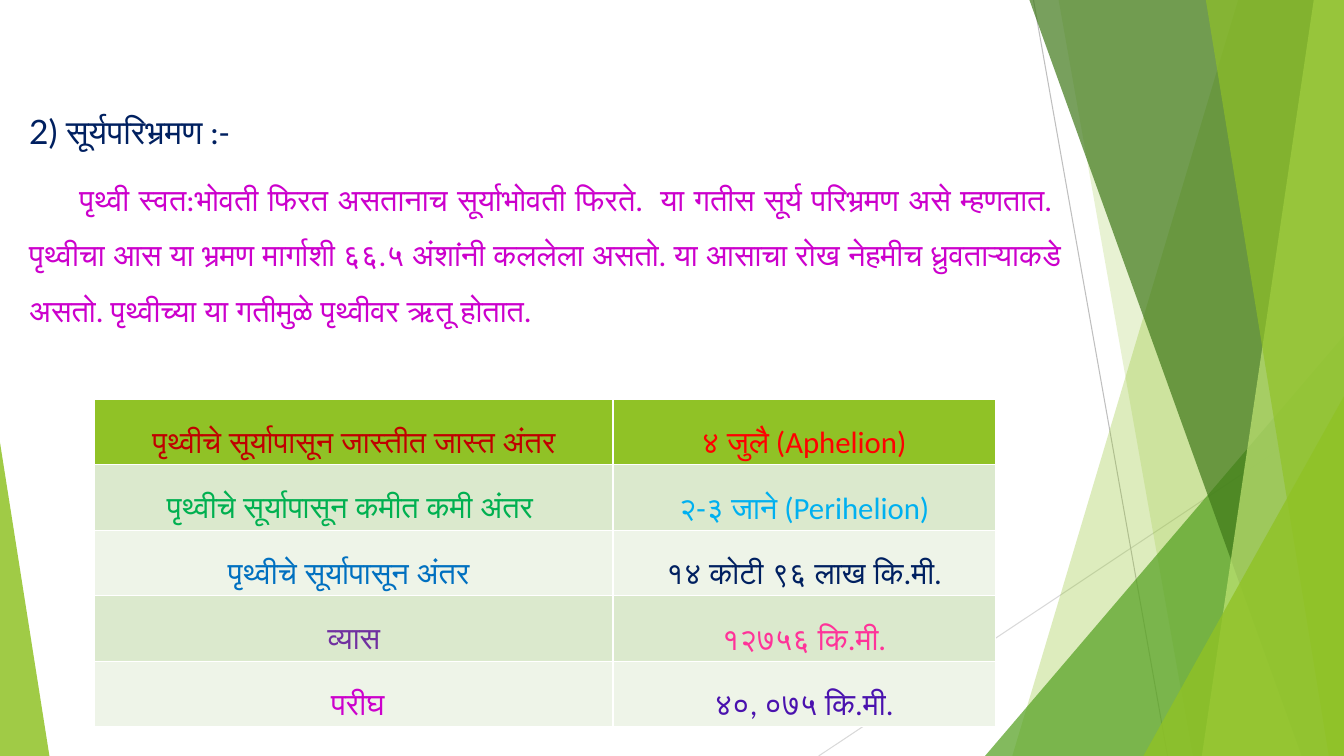
from dataclasses import dataclass
from lxml.etree import SubElement
from pptx import Presentation
from pptx.dml.color import RGBColor
from pptx.enum.shapes import MSO_CONNECTOR, MSO_SHAPE
from pptx.enum.text import PP_ALIGN
from pptx.oxml.ns import qn
from pptx.util import Inches, Pt

W, H = 13.33, 7.5


@dataclass(frozen=True)
class Theme:
    script: str = "Lato"
    latin: str = "Calibri"
    heading: int = 24
    body: int = 22
    spacing: float = 1.5
    navy: str = "002060"
    magenta: str = "CC00CC"
    green: str = "90C226"
    leaf: str = "54A021"
    forest: str = "3F7819"
    lime: str = "C0E474"
    bands: tuple = ("DBE9CD", "EEF4E8")
    lines: tuple = ("BFBFBF", "D9D9D9")


T = Theme()

# Runs alternate between the script font and the Latin font at each bar.
HEADING = "2) सूर्यपरिभ्रमण| :-"
BODY = ("\tपृथ्वी स्वत|:|भोवती फिरत असतानाच सूर्याभोवती फिरते|.  |"
        "या गतीस सूर्य परिभ्रमण असे म्हणतात|.  |"
        "पृथ्वीचा आस या भ्रमण मार्गाशी ६६|.|५ अंशांनी कललेला असतो|. |"
        "या आसाचा रोख नेहमीच ध्रुवताऱ्याकडे असतो|. |"
        "पृथ्वीच्या या गतीमुळे पृथ्वीवर ऋतू होतात|.")
FACTS = [
    (("पृथ्वीचे सूर्यापासून जास्तीत जास्त अंतर", "C00000"),
     ("४ जुलै| (Aphelion)", "FF0000")),
    (("पृथ्वीचे सूर्यापासून कमीत कमी अंतर ", "00B050"),
     ("२|-|३ जाने| (Perihelion)", "00B0F0")),
    (("पृथ्वीचे सूर्यापासून अंतर \t", "0070C0"),
     ("१४ कोटी ९६ लाख कि|.|मी|.", T.navy)),
    (("व्यास", "7030A0"), ("१२७५६ कि|.|मी|.", "FF3399")),
    ((" परीघ", T.magenta), ("४०|, |०७५ कि|.|मी|.", "4A12AE")),
]
COLUMNS = (5.14, 3.79)
ROW = 0.65

RAYS = [
    (((W, 4.03), (8.12, H)), T.lines[1]),
    (((10.25, 0), (11.58, H)), T.lines[0]),
]
FACETS = [
    ("band", 12.28, 10.04, T.green, 30),
    ("band", 10.5, 11.83, T.green, 20),
    ("peak", 9.77, 3.33, T.leaf, 72),
    ("band", 10.21, 12.91, T.forest, 70),
    ("band", 13.03, 11.92, T.lime, 70),
    ("band", 11.96, 13.18, T.green, 65),
    ("peak", 11.34, 3.93, T.green, 80),
    ("corner", 0.49, 4.39, T.green, 85),
]


def write(p, text, size=T.body, color=T.navy, align=PP_ALIGN.CENTER, after=0):
    p.alignment, p.line_spacing, p.space_after = align, T.spacing, Pt(after)
    pPr = p._p.get_or_add_pPr()
    for key, value in (("marL", 0), ("indent", 0), ("defTabSz", Inches(0.5))):
        pPr.set(key, str(int(value)))
    for i, part in enumerate(text.split("|")):
        r = p.add_run()
        r.text = part
        r.font.size, r.font.bold = Pt(size), False
        r.font.name = T.latin if i % 2 else T.script
        r.font.color.rgb = RGBColor.from_string(color)
        SubElement(r._r.get_or_add_rPr(), qn("a:cs"), typeface=r.font.name)


def facet(s, kind, x, y, color, alpha):
    if kind == "band":
        fb = s.shapes.build_freeform(Inches(x), 0)
        fb.add_line_segments([(Inches(a), Inches(b)) for a, b in
                              ((W, 0), (W, H), (y, H))], close=True)
        sp = fb.convert_to_shape()
    else:
        left, width = (0, x) if kind == "corner" else (x, W - x)
        sp = s.shapes.add_shape(MSO_SHAPE.ISOSCELES_TRIANGLE, Inches(left),
                                Inches(y), Inches(width), Inches(H - y))
        sp.adjustments[0] = 0 if kind == "corner" else 1
    sp.shadow.inherit = False
    sp.line.fill.background()
    sp.fill.solid()
    sp.fill.fore_color.rgb = RGBColor.from_string(color)
    clr = sp.fill._xPr.find(qn("a:solidFill"))[0]
    SubElement(clr, qn("a:alpha"), val=str(alpha * 1000))


def ray(s, ends, color):
    c = s.shapes.add_connector(MSO_CONNECTOR.STRAIGHT,
                               *(Inches(v) for end in ends for v in end))
    c.line.color.rgb = RGBColor.from_string(color)
    c.line.width = Pt(0.75)
    SubElement(c._element.spPr, qn("a:effectLst"))


def facts_table(s):
    tbl = s.shapes.add_table(len(FACTS), len(COLUMNS), Inches(0.94), Inches(3.96),
                             Inches(sum(COLUMNS)), Inches(ROW * len(FACTS))).table
    for col, width in zip(tbl.columns, COLUMNS):
        col.width = Inches(width)
    for i, row in enumerate(FACTS):
        fill = T.bands[(i - 1) % 2] if i else T.green
        for j, (text, color) in enumerate(row):
            cell = tbl.cell(i, j)
            cell.fill.solid()
            cell.fill.fore_color.rgb = RGBColor.from_string(fill)
            write(cell.text_frame.paragraphs[0], text, color=color)


def main():
    prs = Presentation()
    prs.slide_width, prs.slide_height = Inches(W), Inches(H)
    s = prs.slides.add_slide(prs.slide_layouts[6])
    for ends, color in RAYS:
        ray(s, ends, color)
    for item in FACETS:
        facet(s, *item)
    tf = s.shapes.add_textbox(Inches(0.19), Inches(0.85),
                              Inches(10.43), Inches(3.03)).text_frame
    tf.word_wrap = True
    write(tf.paragraphs[0], HEADING, size=T.heading,
          align=PP_ALIGN.JUSTIFY, after=8)
    write(tf.add_paragraph(), BODY, color=T.magenta,
          align=PP_ALIGN.JUSTIFY, after=8)
    facts_table(s)
    prs.save("out.pptx")


if __name__ == "__main__":
    main()
